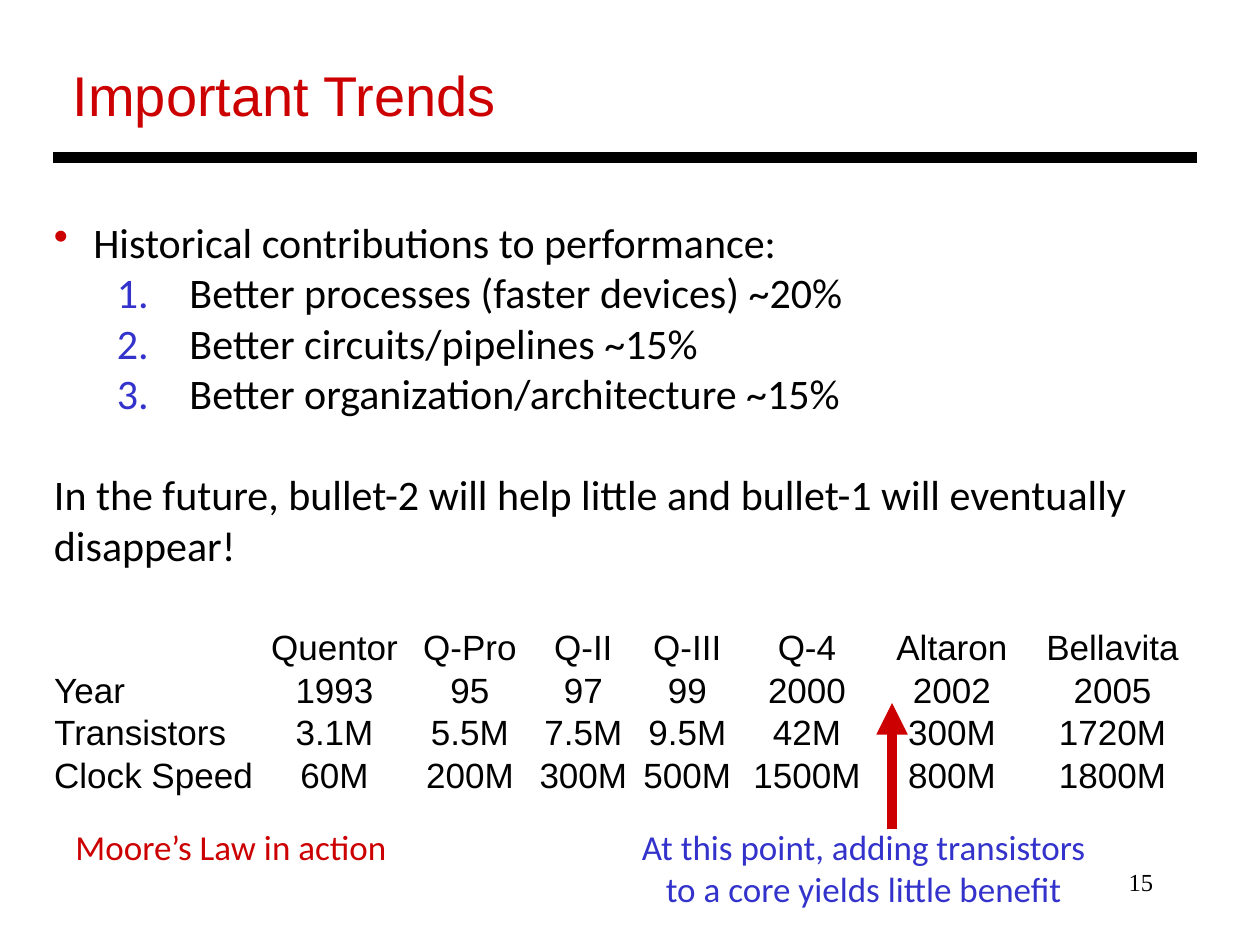
import dataclasses

import lxml.etree
import pptx
import pptx.dml.color
import pptx.enum.shapes
import pptx.enum.text
import pptx.oxml.ns
import pptx.util


@dataclasses.dataclass(frozen=True)
class Theme:
    """Colours, fonts, type sizes and line weight of the lecture slides."""
    black: str = "000000"
    red: str = "CC0000"
    blue: str = "3333CC"
    heading_font: str = "Arial"
    body_font: str = "Calibri"
    number_font: str = "Times New Roman"
    title: int = 32
    body: int = 24
    detail: int = 20
    number: int = 14
    rule: int = 6


class SlideBuilder:
    """Places styled elements on a slide by a 40 by 30 grid."""

    def __init__(self, presentation, theme):
        self.theme = theme
        self.slide = presentation.slides.add_slide(presentation.slide_layouts[6])
        self.column = presentation.slide_width / 40
        self.row = presentation.slide_height / 30

    def across(self, columns):
        """Turn grid columns into a length."""
        return round(columns * self.column)

    def down(self, rows):
        """Turn grid rows into a length."""
        return round(rows * self.row)

    def area(self, left, top, width, height):
        """Turn a grid area into lengths."""
        return self.across(left), self.down(top), self.across(width), self.down(height)

    def style(self, paragraph, font, size, color, align="LEFT"):
        """Set font, size, colour and alignment of a paragraph."""
        paragraph.font.name = font
        paragraph.font.size = pptx.util.Pt(size)
        paragraph.font.color.rgb = pptx.dml.color.RGBColor.from_string(color)
        paragraph.alignment = getattr(pptx.enum.text.PP_ALIGN, align)

    def text(self, area, lines, font, size, color, align="LEFT"):
        """Add a text box and return its paragraphs."""
        frame = self.slide.shapes.add_textbox(*self.area(*area)).text_frame
        frame.word_wrap = True
        frame.text = "\n".join(lines)
        for paragraph in frame.paragraphs:
            self.style(paragraph, font, size, color, align)
        return frame.paragraphs

    def bullet(self, paragraph, color, margin, hanging, tag, **attributes):
        """Give a paragraph a coloured bullet or number."""
        properties = paragraph._p.get_or_add_pPr()
        properties.set("marL", str(self.across(margin)))
        properties.set("indent", str(-self.across(hanging)))
        qualified = pptx.oxml.ns.qn
        bullet_color = lxml.etree.Element(qualified("a:buClr"))
        lxml.etree.SubElement(bullet_color, qualified("a:srgbClr"), val=color)
        marker = lxml.etree.Element(qualified(tag), **attributes)
        properties.insert(0, bullet_color)
        properties.insert(1, marker)

    def line(self, start, end, color, arrow=False):
        """Add a thick straight line, with an arrowhead at its end if asked."""
        connector = self.slide.shapes.add_connector(
            pptx.enum.shapes.MSO_CONNECTOR.STRAIGHT,
            self.across(start[0]), self.down(start[1]),
            self.across(end[0]), self.down(end[1]))
        connector.line.width = pptx.util.Pt(self.theme.rule)
        connector.line.color.rgb = pptx.dml.color.RGBColor.from_string(color)
        qualified = pptx.oxml.ns.qn
        if arrow:
            lxml.etree.SubElement(connector.line._get_or_add_ln(),
                                  qualified("a:tailEnd"), type="triangle")
        lxml.etree.SubElement(connector._element.spPr, qualified("a:effectLst"))

    def table(self, left, top, widths, row_height, rows):
        """Add a plain table with a left label column and centred values."""
        area = self.area(left, top, sum(widths), row_height * len(rows))
        table = self.slide.shapes.add_table(len(rows), len(widths), *area).table
        table.first_row = table.horz_banding = False
        for column, width in zip(table.columns, widths):
            column.width = self.across(width)
        for row, values in zip(table.rows, rows):
            row.height = self.down(row_height)
            for index, (cell, value) in enumerate(zip(row.cells, values)):
                cell.fill.background()
                cell.margin_left = cell.margin_right = 0
                cell.margin_top = cell.margin_bottom = 0
                cell.vertical_anchor = pptx.enum.text.MSO_ANCHOR.MIDDLE
                cell.text = value
                self.style(cell.text_frame.paragraphs[0], self.theme.heading_font,
                           self.theme.detail, self.theme.black,
                           "CENTER" if index else "LEFT")


def main():
    """Build the trends slide."""
    presentation = pptx.Presentation()
    presentation.slide_width = pptx.util.Inches(10)
    presentation.slide_height = pptx.util.Inches(7.5)
    theme = Theme()
    builder = SlideBuilder(presentation, theme)

    builder.text((28.68, 27.32, 8.32, 2), ["15"], theme.number_font,
                 theme.number, theme.black, "RIGHT")
    builder.text((1.92, 1.72, 20, 2.56), ["Important Trends"],
                 theme.heading_font, theme.title, theme.red)
    builder.line((1.68, 5), (38, 5), theme.black)

    heading, *factors, outlook = builder.text((1.32, 6.68, 36.88, 12), [
        "Historical contributions to performance:",
        "Better processes (faster devices) ~20%",
        "Better circuits/pipelines ~15%",
        "Better organization/architecture ~15%",
        "In the future, bullet-2 will help little and bullet-1 will eventually disappear!",
    ], theme.body_font, theme.body, theme.black)
    builder.bullet(heading, theme.red, 1.25, 1.25, "a:buChar", char="•")
    for factor in factors:
        builder.bullet(factor, theme.blue, 4.3, 2.3, "a:buAutoNum", type="arabicPeriod")
    outlook.space_before = pptx.util.Pt(29)

    builder.table(1.72, 19.92, [6.6, 4.6, 4, 3.2, 3.4, 4.2, 5, 5.2], 1.35, [
        ["", "Quentor", "Q-Pro", "Q-II", "Q-III", "Q-4", "Altaron", "Bellavita"],
        ["Year", "1993", "95", "97", "99", "2000", "2002", "2005"],
        ["Transistors", "3.1M", "5.5M", "7.5M", "9.5M", "42M", "300M", "1720M"],
        ["Clock Speed", "60M", "200M", "300M", "500M", "1500M", "800M", "1800M"],
    ])
    builder.line((28.32, 26.32), (28.32, 22.32), theme.red, arrow=True)

    builder.text((18.92, 26, 17, 3.08),
                 ["At this point, adding transistors", "to a core yields little benefit"],
                 theme.body_font, theme.detail, theme.blue, "CENTER")
    builder.text((2, 26, 12, 1.76), ["Moore’s Law in action"],
                 theme.body_font, theme.detail, theme.red)
    presentation.save("out.pptx")


if __name__ == "__main__":
    main()
